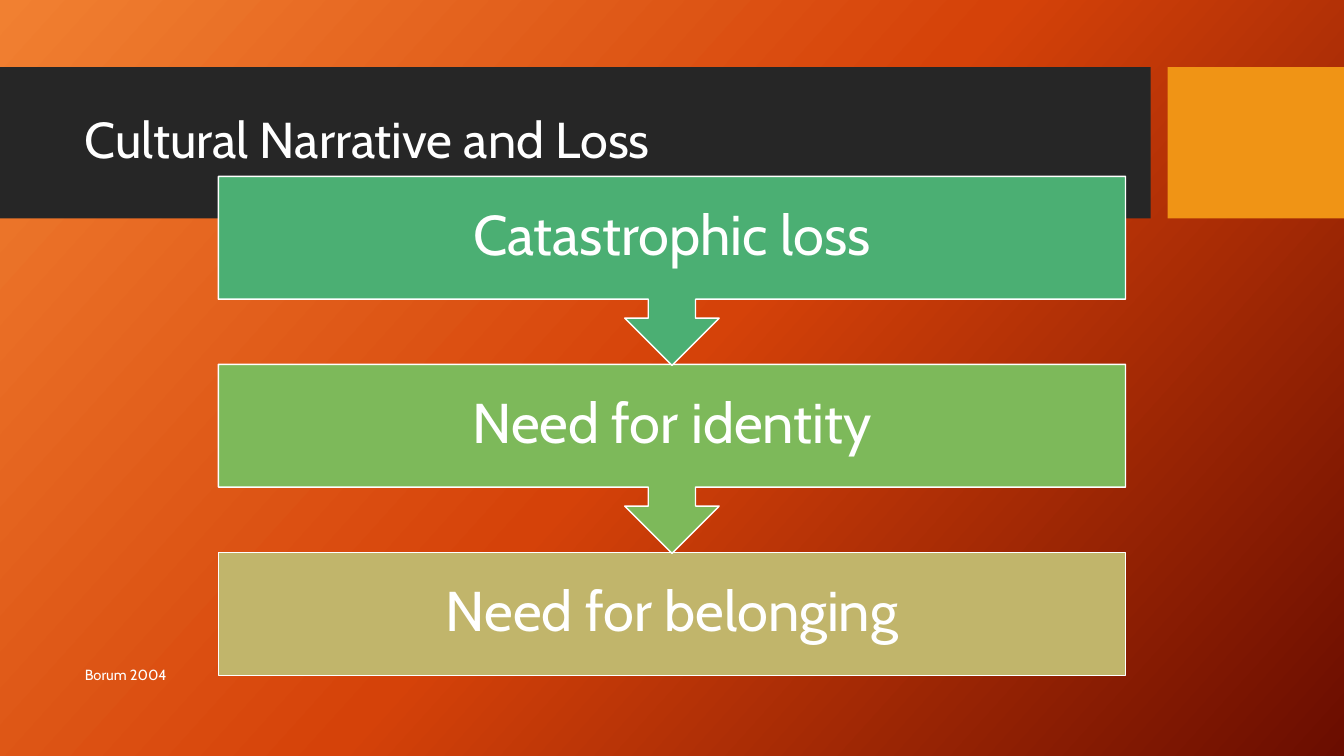
from copy import deepcopy

from pptx import Presentation
from pptx.dml.color import RGBColor
from pptx.enum.shapes import MSO_SHAPE
from pptx.enum.text import MSO_ANCHOR, MSO_AUTO_SIZE, PP_ALIGN
from pptx.oxml.ns import qn
from pptx.util import Pt

RECT = MSO_SHAPE.RECTANGLE
CALLOUT = MSO_SHAPE.DOWN_ARROW_CALLOUT
MIDDLE = MSO_ANCHOR.MIDDLE
FIXED = MSO_AUTO_SIZE.NONE
LEFT = PP_ALIGN.LEFT
CENTER = PP_ALIGN.CENTER

FONT = "Cabin"
WHITE = "FFFFFF"
GLOW = [(0, "F18031"), (0.5, "D54209"), (1, "6A0D00")]
STEPS = [
    ("Catastrophic loss", "4BAF73"),
    ("Need for identity", "7DB95A"),
    ("Need for belonging", "C1B56B"),
]


def color(text):
    return RGBColor.from_string(text)


def backdrop(slide):
    fill = slide.background.fill
    fill.gradient()
    fill.gradient_angle = 360 - 42
    stops = next(slide.element.iter(qn("a:gsLst")))
    stops.insert(1, deepcopy(stops[0]))
    for stop, (place, shade) in zip(fill.gradient_stops, GLOW):
        stop.position = place
        stop.color.rgb = color(shade)


def block(slide, kind, box, shade, edge=None):
    shape = slide.shapes.add_shape(kind, *map(Pt, box))
    shape.shadow.inherit = False
    shape.fill.solid()
    shape.fill.fore_color.rgb = color(shade)
    if edge:
        shape.line.color.rgb = color(edge)
        shape.line.width = Pt(1)
    else:
        shape.line.fill.background()
    return shape


def write(shape, words, size, align=LEFT, spacing=None):
    frame = shape.text_frame
    frame.word_wrap = True
    frame.auto_size = FIXED
    frame.vertical_anchor = MIDDLE
    para = frame.paragraphs[0]
    para.alignment = align
    para.line_spacing = spacing
    run = para.add_run()
    run.text = words
    run.font.name = FONT
    run.font.size = Pt(size)
    run.font.color.rgb = color(WHITE)


def header(slide, box):
    left, top, width, height = box
    tab, gap = 126, 12
    bar = width - tab - gap
    block(slide, RECT, (left, top, bar, height), "262626")
    block(slide, RECT, (left + bar + gap, top, tab, height), "F09415")
    title = slide.shapes.title
    title.left, title.top = Pt(left + 53.5), Pt(top + 11)
    title.width, title.height = Pt(757), Pt(85)
    tree = title.element.getparent()
    tree.append(title.element)
    write(title, "Cultural Narrative and Loss", 36, spacing=0.9)


def flow(slide, box):
    left, top, width, height = box
    tall, short = 135, 88
    pitch = (height - short) / (len(STEPS) - 1)
    last = len(STEPS) - 1
    for index, (words, shade) in reversed(list(enumerate(STEPS))):
        kind, size = (RECT, short) if index == last else (CALLOUT, tall)
        place = (left, top + index * pitch, width, size)
        step = block(slide, kind, place, shade, WHITE)
        write(step, words, 40, CENTER, 0.9)


def credit(slide, box):
    note = slide.shapes.add_textbox(*map(Pt, box))
    write(note, "Borum 2004", 10.5)


def main():
    deck = Presentation()
    deck.slide_width, deck.slide_height = Pt(960), Pt(540)
    slide = deck.slides.add_slide(deck.slide_layouts[5])
    backdrop(slide)
    header(slide, (0, 48, 960, 108))
    flow(slide, (156, 126, 648, 356.5))
    credit(slide, (53.5, 467.5, 541, 29))
    deck.save("out.pptx")


if __name__ == "__main__":
    main()
